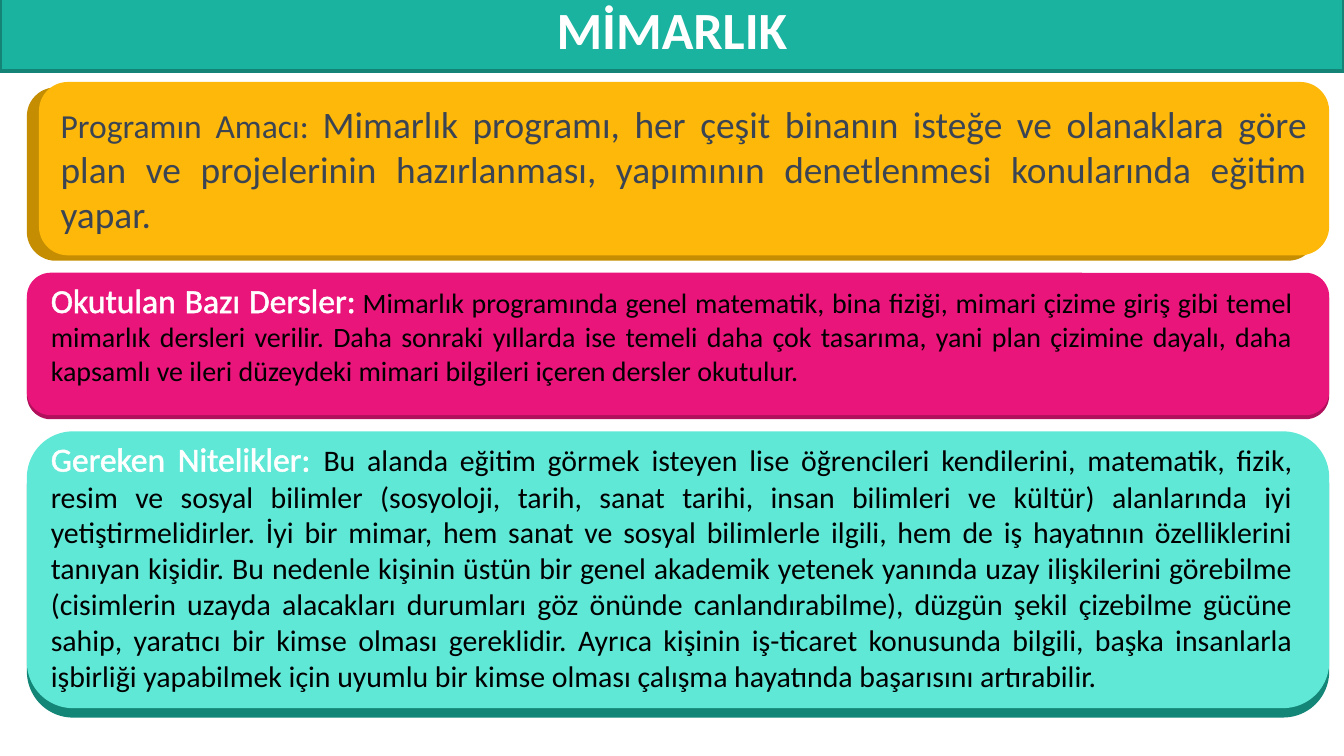
"""Build a slide that introduces the architecture degree programme."""
from lxml import etree
from pptx import Presentation
from pptx.dml.color import RGBColor
from pptx.enum.shapes import MSO_SHAPE as Shape
from pptx.enum.text import MSO_ANCHOR as Anchor, PP_ALIGN as Align
from pptx.oxml.ns import qn
from pptx.util import Inches, Pt

COLORS = {
    "white": "FFFFFF", "black": "000000", "slate": "3B4453",
    "teal": "1AB39F", "dark_teal": "138476",
    "amber": "FEB80A", "dark_amber": "C58D01",
    "pink": "EA157A", "dark_pink": "B0105C",
    "aqua": "5FE8D6", "dark_aqua": "138677",
}
FONT = "Calibri"
OUTLINE_WIDTH = 1.45
SLIDE_WIDTH = 10
SLIDE_HEIGHT = SLIDE_WIDTH * 9 / 16
TITLE = {"text": "MİMARLIK", "size": 28, "color": "white", "bold": True}
TITLE_BOX = (0, -0.1, SLIDE_WIDTH, 0.63)

SECTIONS = [
    {
        "back": (0.2, 0.65, 9.6, 1.29), "front": (0.29, 0.61, 9.6, 1.29),
        "fills": ("dark_amber", "amber"), "text_box": None,
        "runs": [
            {"text": "Programın Amacı: ", "size": 18, "color": "slate", "outline": "white"},
            {"text": "Mimarlık programı, her çeşit binanın isteğe ve olanaklara göre plan ve "
                     "projelerinin hazırlanması, yapımının denetlenmesi konularında eğitim yapar.",
             "size": 20, "color": "slate"},
        ],
    },
    {
        "back": (0.2, 2.06, 9.69, 1.06), "front": (0.2, 2.03, 9.69, 1.06),
        "fills": ("dark_pink", "pink"), "text_box": (0.28, 2.03, 9.44, 0.91),
        "runs": [
            {"text": "Okutulan Bazı Dersler:", "size": 18, "color": "white", "outline": "white"},
            {"text": " ", "size": 12, "color": "white", "outline": "white"},
            {"text": "Mimarlık programında genel matematik, bina fiziği, mimari çizime giriş gibi "
                     "temel mimarlık dersleri verilir. Daha sonraki yıllarda ise temeli daha çok "
                     "tasarıma, yani plan çizimine dayalı, daha kapsamlı ve ileri düzeydeki mimari "
                     "bilgileri içeren dersler okutulur.",
             "size": 15, "color": "black"},
        ],
    },
    {
        "back": (0.2, 3.28, 9.69, 2.06), "front": (0.2, 3.21, 9.69, 2.06),
        "fills": ("dark_aqua", "aqua"), "text_box": (0.28, 3.21, 9.44, 2.05),
        "runs": [
            {"text": "Gereken Nitelikler: ", "size": 18, "color": "white", "outline": "white"},
            {"text": "Bu alanda eğitim görmek isteyen lise öğrencileri kendilerini, matematik, "
                     "fizik, resim ve sosyal bilimler (sosyoloji, tarih, sanat tarihi, insan "
                     "bilimleri ve kültür) alanlarında iyi yetiştirmelidirler. İyi bir mimar, hem "
                     "sanat ve sosyal bilimlerle ilgili, hem de iş hayatının özelliklerini tanıyan "
                     "kişidir. Bu nedenle kişinin üstün bir genel akademik yetenek yanında uzay "
                     "ilişkilerini görebilme (cisimlerin uzayda alacakları durumları göz önünde "
                     "canlandırabilme), düzgün şekil çizebilme gücüne sahip, yaratıcı bir kimse "
                     "olması gereklidir. Ayrıca kişinin iş-ticaret konusunda bilgili, başka "
                     "insanlarla işbirliği yapabilmek için uyumlu bir kimse olması çalışma "
                     "hayatında başarısını artırabilir.",
             "size": 16, "color": "black"},
        ],
    },
]


def rgb(name):
    return RGBColor.from_string(COLORS[name])


def add_panel(shapes, kind, box, fill, line=None):
    shape = shapes.add_shape(kind, *map(Inches, box))
    shape.shadow.inherit = False
    shape.fill.solid()
    shape.fill.fore_color.rgb = rgb(fill)
    if line:
        shape.line.color.rgb = rgb(line)
        shape.line.width = Pt(2)
    else:
        shape.line.fill.background()
    return shape


def outline_run(run, color):
    properties = run.font._element
    line = etree.Element(qn("a:ln"), w=str(Pt(OUTLINE_WIDTH)))
    solid = etree.SubElement(line, qn("a:solidFill"))
    etree.SubElement(solid, qn("a:srgbClr"), val=COLORS[color])
    properties.insert(0, line)


def write(shape, runs, align, **frame_format):
    for name, value in {"word_wrap": True, **frame_format}.items():
        setattr(shape.text_frame, name, value)
    paragraph = shape.text_frame.paragraphs[0]
    paragraph.alignment = align
    for content in runs:
        run = paragraph.add_run()
        run.text = content["text"]
        values = {"name": FONT, "size": Pt(content["size"]), "bold": content.get("bold", False)}
        for name, value in values.items():
            setattr(run.font, name, value)
        run.font.color.rgb = rgb(content["color"])
        if "outline" in content:
            outline_run(run, content["outline"])


def add_section(slide, section):
    group = slide.shapes.add_group_shape()
    back_fill, front_fill = section["fills"]
    add_panel(group.shapes, Shape.ROUNDED_RECTANGLE, section["back"], back_fill)
    target = add_panel(group.shapes, Shape.ROUNDED_RECTANGLE, section["front"], front_fill)
    anchor = Anchor.MIDDLE
    if section["text_box"]:
        target = group.shapes.add_textbox(*map(Inches, section["text_box"]))
        anchor = Anchor.TOP
    write(target, section["runs"], Align.JUSTIFY, vertical_anchor=anchor)


def main():
    presentation = Presentation()
    presentation.slide_width = Inches(SLIDE_WIDTH)
    presentation.slide_height = Inches(SLIDE_HEIGHT)
    slide = presentation.slides.add_slide(presentation.slide_layouts[6])
    title = add_panel(slide.shapes, Shape.RECTANGLE, TITLE_BOX, "teal", "dark_teal")
    write(title, [TITLE], Align.CENTER, vertical_anchor=Anchor.MIDDLE,
          margin_left=Inches(0.08), margin_right=Inches(0.08),
          margin_top=Inches(0.04), margin_bottom=Inches(0.04))
    for section in SECTIONS:
        add_section(slide, section)
    presentation.save("out.pptx")


if __name__ == "__main__":
    main()
